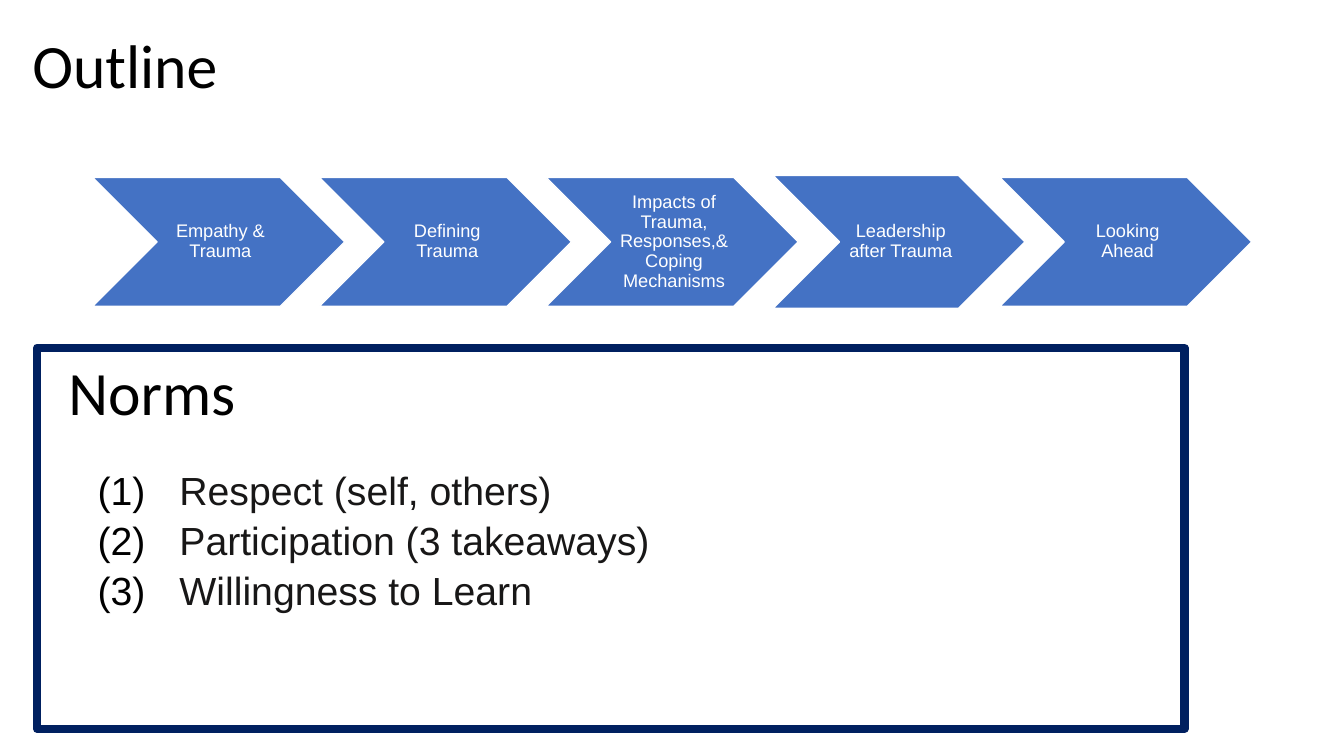
"""Build the outline slide: a row of topic chevrons above a framed list of norms."""
import pptx
import pptx.dml.color
import pptx.enum.shapes
import pptx.enum.text
import pptx.oxml
import pptx.oxml.ns
import pptx.util

Pt = pptx.util.Pt
Align = pptx.enum.text.PP_ALIGN
Shape = pptx.enum.shapes.MSO_SHAPE


def color(hex_string):
    """Return the colour for a hex string."""
    return pptx.dml.color.RGBColor.from_string(hex_string)


def write(shape, lines, font, size, hex_string, align=Align.LEFT, spacing=0.9):
    """Fill a shape with vertically centred paragraphs."""
    frame = shape.text_frame
    frame.text = "\n".join(lines)
    frame.word_wrap = True
    frame.vertical_anchor = pptx.enum.text.MSO_ANCHOR.MIDDLE
    for paragraph in frame.paragraphs:
        paragraph.alignment = align
        paragraph.line_spacing = spacing
        for run in paragraph.runs:
            run.font.name = font
            run.font.size = Pt(size)
            run.font.color.rgb = color(hex_string)


presentation = pptx.Presentation()
presentation.slide_width = Pt(960)
presentation.slide_height = Pt(540)
slide = presentation.slides.add_slide(presentation.slide_layouts[6])

topics = [
    ("Empathy & Trauma", 92),
    ("Defining Trauma", 92),
    ("Impacts of Trauma, Responses,& Coping Mechanisms", 92),
    ("Leadership after Trauma", 95),
    ("Looking Ahead", 92),
]
row_middle = 172.8
for index, (topic, height) in enumerate(topics):
    chevron = slide.shapes.add_shape(
        Shape.CHEVRON, Pt(66.2 + 162 * index), Pt(row_middle - height / 2), Pt(180), Pt(height))
    chevron.shadow.inherit = False
    chevron.fill.solid()
    chevron.fill.fore_color.rgb = color("4472C4")
    chevron.line.color.rgb = color("FFFFFF")
    chevron.line.width = Pt(1)
    frame = chevron.text_frame
    frame.margin_left = Pt(4)
    frame.margin_top = frame.margin_right = frame.margin_bottom = Pt(1.5)
    write(chevron, [topic], "Arial", 13, "FFFFFF", Align.CENTER)

headings = [("Norms", 41.8, 230.4, 828, 104.4), ("Outline", 16, 13, 828, 71.3)]
for heading, left, top, width, height in headings:
    box = slide.shapes.add_textbox(Pt(left), Pt(top), Pt(width), Pt(height))
    write(box, [heading], "Calibri", 44, "000000")

norms_frame = slide.shapes.add_shape(Shape.RECTANGLE, Pt(26.6), Pt(248.4), Pt(819.4), Pt(272.2))
norms_frame.shadow.inherit = False
norms_frame.fill.background()
norms_frame.line.color.rgb = color("002060")
norms_frame.line.width = Pt(6)
outline = norms_frame.line._get_or_add_ln()
outline.append(pptx.oxml.parse_xml(f"<a:round {pptx.oxml.ns.nsdecls('a')}/>"))

norms = ["Respect (self, others)", "Participation (3 takeaways)", "Willingness to Learn"]
write(norms_frame, norms, "Arial", 28, "181717", spacing=1.07)
bullet_parts = [
    '<a:buClr {}><a:srgbClr val="000000"/></a:buClr>',
    '<a:buFont {} typeface="Arial"/>',
    '<a:buAutoNum {} type="arabicParenBoth"/>',
]
for paragraph in norms_frame.text_frame.paragraphs:
    properties = paragraph._p.get_or_add_pPr()
    properties.set("marL", str(Pt(94.5)))
    properties.set("indent", str(Pt(-58.5)))
    for part in bullet_parts:
        properties.append(pptx.oxml.parse_xml(part.format(pptx.oxml.ns.nsdecls("a"))))

presentation.save("out.pptx")
